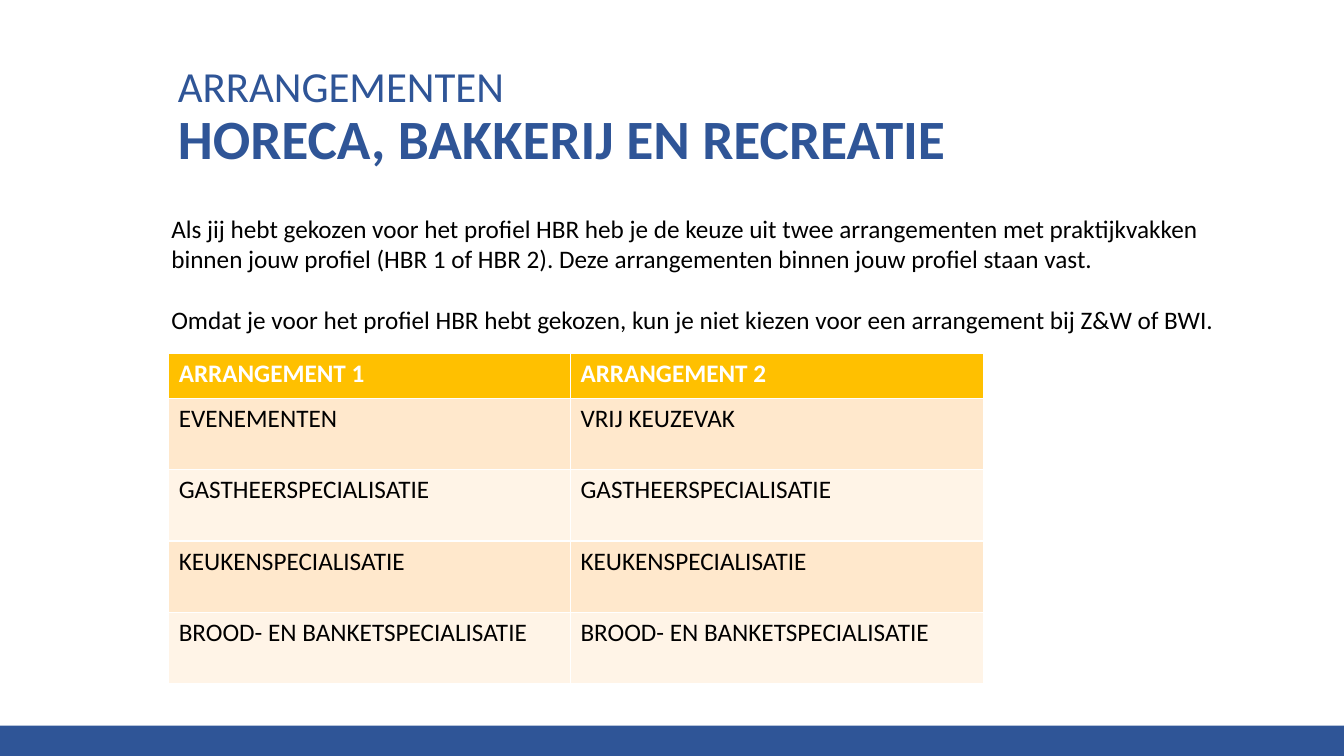
import pptx
import pptx.dml.color
import pptx.enum.shapes
import pptx.enum.text
import pptx.util

Pt = pptx.util.Pt
BLUE, BLACK, WHITE = "2F5597", "000000", "FFFFFF"
HEADER_FILL, ROW_FILLS = "FFC000", ("FFF4E7", "FFE8CC")


def rgb(value):
    return pptx.dml.color.RGBColor.from_string(value)


def add_span(para, text, color, size, bold=False):
    span = para.add_run()
    span.text = text
    for name, value in {"name": "Calibri", "size": Pt(size), "bold": bold}.items():
        setattr(span.font, name, value)
    span.font.color.rgb = rgb(color)


deck = pptx.Presentation()
deck.slide_width, deck.slide_height = Pt(960), Pt(540)
page = deck.slides.add_slide(deck.slide_layouts[6])

# Footer bar
footer = page.shapes.add_shape(
    pptx.enum.shapes.MSO_SHAPE.RECTANGLE, Pt(0), Pt(518.4), Pt(960), Pt(21.6))
footer.shadow.inherit = False
footer.fill.solid()
footer.fill.fore_color.rgb = rgb(BLUE)
footer.line.fill.background()

# Title
title = page.shapes.add_textbox(Pt(120), Pt(36), Pt(720), Pt(90)).text_frame
title.word_wrap = True
title.vertical_anchor = pptx.enum.text.MSO_ANCHOR.BOTTOM
title_para = title.paragraphs[0]
title_para.line_spacing = 0.9
add_span(title_para, "ARRANGEMENTEN", BLUE, 30.6)
title_para.add_line_break()
add_span(title_para, "HORECA, BAKKERIJ EN RECREATIE", BLUE, 39.6, bold=True)

# Table of arrangements
rows = [
    ("ARRANGEMENT 1", "ARRANGEMENT 2"),
    ("EVENEMENTEN", "VRIJ KEUZEVAK"),
    ("GASTHEERSPECIALISATIE", "GASTHEERSPECIALISATIE"),
    ("KEUKENSPECIALISATIE", "KEUKENSPECIALISATIE"),
    ("BROOD- EN BANKETSPECIALISATIE", "BROOD- EN BANKETSPECIALISATIE"),
]
table = page.shapes.add_table(
    len(rows), 2, Pt(120.5), Pt(252.5), Pt(582), Pt(236)).table
for column, width in zip(table.columns, (287, 295)):
    column.width = Pt(width)
for row_index, texts in enumerate(rows):
    is_header = row_index == 0
    table.rows[row_index].height = Pt(32 if is_header else 51)
    for column_index, text in enumerate(texts):
        cell = table.cell(row_index, column_index)
        cell.fill.solid()
        cell.fill.fore_color.rgb = rgb(HEADER_FILL if is_header else ROW_FILLS[row_index % 2])
        add_span(cell.text_frame.paragraphs[0], text,
                 WHITE if is_header else BLACK, 18, bold=is_header)

# Explanation
body = page.shapes.add_textbox(Pt(111.6), Pt(149), Pt(780.5), Pt(94.5)).text_frame
body.word_wrap = True
body.margin_left = Pt(10.8)
add_span(body.paragraphs[0],
         "Als jij hebt gekozen voor het profiel HBR heb je de keuze uit twee "
         "arrangementen met praktijkvakken binnen jouw profiel (HBR 1 of HBR 2). "
         "Deze arrangementen binnen jouw profiel staan vast.", BLACK, 18)
closing_para = body.add_paragraph()
closing_para.space_before = Pt(22)
add_span(closing_para,
         "Omdat je voor het profiel HBR hebt gekozen, kun je niet kiezen voor een "
         "arrangement bij Z&W of BWI.", BLACK, 18)

deck.save("out.pptx")
